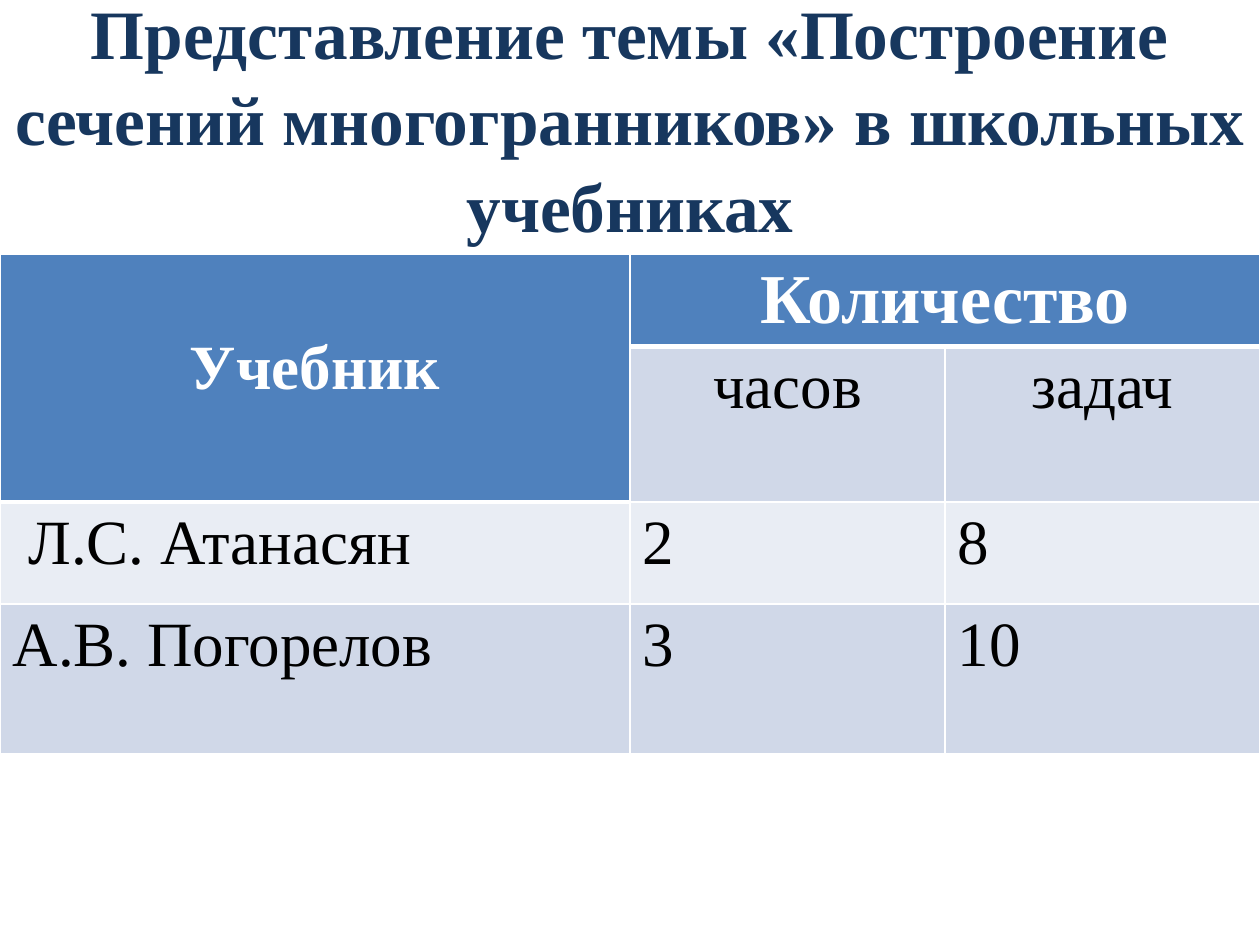
from dataclasses import dataclass

from lxml import etree
from pptx import Presentation
from pptx.dml.color import RGBColor
from pptx.enum import text
from pptx.oxml.ns import qn
from pptx.util import Inches, Pt

WHITE = RGBColor(0xFF, 0xFF, 0xFF)
BLACK = RGBColor(0x00, 0x00, 0x00)
NAVY = RGBColor(0x17, 0x37, 0x5E)
HEADER_BLUE = RGBColor(0x4F, 0x81, 0xBD)
BAND_DARK = RGBColor(0xD0, 0xD8, 0xE8)
BAND_LIGHT = RGBColor(0xE9, 0xED, 0xF4)

FONT = "Times New Roman"
CENTER, LEFT = text.PP_ALIGN.CENTER, text.PP_ALIGN.LEFT
SLIDE_WIDTH, SLIDE_HEIGHT = Inches(10), Inches(7.5)
COLUMN_SHARES = (0.5, 0.25, 0.25)
ROW_HEIGHTS = (0.73, 1.2, 0.81, 1.19)
TABLE_TOP = 2.02
TEXTBOOK_MARGIN = 0.63  # sets the textbook heading one line lower


@dataclass(frozen=True)
class CellStyle:
    fill: RGBColor
    color: RGBColor = BLACK
    size: float = 36
    bold: bool = False
    align: text.PP_ALIGN = LEFT
    rule_below: float = 1


@dataclass(frozen=True)
class Entry:
    row: int
    column: int
    words: str
    style: CellStyle


TEXTBOOK = CellStyle(HEADER_BLUE, WHITE, 36, True, CENTER, 3)
QUANTITY = CellStyle(HEADER_BLUE, WHITE, 40, True, CENTER, 3)
UNIT = CellStyle(BAND_DARK, align=CENTER)
LIGHT_ROW = CellStyle(BAND_LIGHT)
DARK_ROW = CellStyle(BAND_DARK)

ENTRIES = (
    Entry(0, 0, "Учебник", TEXTBOOK),
    Entry(1, 0, "", TEXTBOOK),
    Entry(0, 1, "Количество", QUANTITY),
    Entry(0, 2, "", QUANTITY),
    Entry(1, 1, "часов", UNIT),
    Entry(1, 2, "задач", UNIT),
    Entry(2, 0, " Л.С. Атанасян", LIGHT_ROW),
    Entry(2, 1, "2", LIGHT_ROW),
    Entry(2, 2, "8", LIGHT_ROW),
    Entry(3, 0, "А.В. Погорелов", DARK_ROW),
    Entry(3, 1, "3", DARK_ROW),
    Entry(3, 2, "10", DARK_ROW),
)


def format_paragraph(paragraph, size: float, color: RGBColor, bold: bool,
                     align: text.PP_ALIGN) -> None:
    paragraph.alignment = align
    font = paragraph.font
    font.name, font.size, font.bold = FONT, Pt(size), bold
    font.color.rgb = color


def add_borders(cell, rule_below: float) -> None:
    properties = cell._tc.get_or_add_tcPr()
    for side, width in (("L", 1), ("R", 1), ("T", 1), ("B", rule_below)):
        line = etree.SubElement(properties, qn(f"a:ln{side}"), w=str(Pt(width)))
        fill = etree.SubElement(line, qn("a:solidFill"))
        etree.SubElement(fill, qn("a:srgbClr"), val=str(WHITE))


def fill_entry(table, entry: Entry) -> None:
    cell, style = table.cell(entry.row, entry.column), entry.style
    add_borders(cell, style.rule_below)
    cell.fill.solid()
    cell.fill.fore_color.rgb = style.fill
    cell.text = entry.words
    format_paragraph(cell.text_frame.paragraphs[0], style.size, style.color,
                     style.bold, style.align)


def add_title(slide, words: str) -> None:
    title = slide.shapes.title
    title.left, title.top = 0, Inches(0.3)
    title.width, title.height = SLIDE_WIDTH, Inches(1.25)
    frame = title.text_frame
    frame.text = words
    frame.word_wrap = True
    frame.auto_size = text.MSO_AUTO_SIZE.NONE
    frame.vertical_anchor = text.MSO_ANCHOR.MIDDLE
    heading = frame.paragraphs[0]
    heading.line_spacing = 1.04
    format_paragraph(heading, 39.6, NAVY, True, CENTER)


def add_textbook_table(slide) -> None:
    table = slide.shapes.add_table(
        len(ROW_HEIGHTS), len(COLUMN_SHARES), 0, Inches(TABLE_TOP),
        SLIDE_WIDTH, Inches(sum(ROW_HEIGHTS))).table
    for column, share in zip(table.columns, COLUMN_SHARES):
        column.width = int(SLIDE_WIDTH * share)
    for row, height in zip(table.rows, ROW_HEIGHTS):
        row.height = Inches(height)
    for entry in ENTRIES:
        fill_entry(table, entry)
    textbook = table.cell(0, 0)
    textbook.margin_top = Inches(TEXTBOOK_MARGIN)
    textbook.merge(table.cell(1, 0))
    table.cell(0, 1).merge(table.cell(0, 2))


def main() -> None:
    deck = Presentation()
    deck.slide_width, deck.slide_height = SLIDE_WIDTH, SLIDE_HEIGHT
    slide = deck.slides.add_slide(deck.slide_layouts[5])
    add_title(slide, "Представление темы «Построение сечений "
                     "многогранников» в школьных учебниках")
    add_textbook_table(slide)
    deck.save("out.pptx")


if __name__ == "__main__":
    main()
